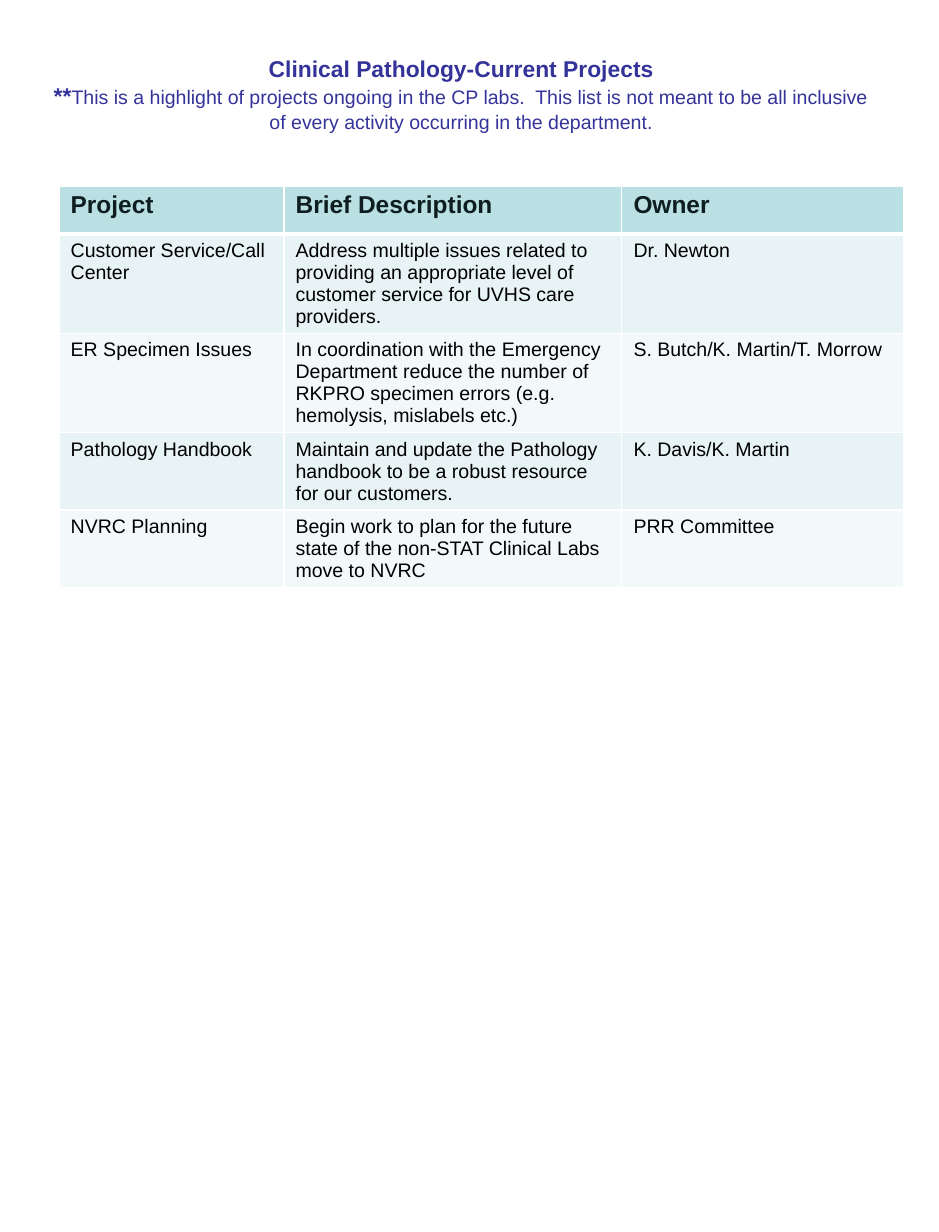
import pptx
import pptx.dml.color
import pptx.enum.text
import pptx.oxml
import pptx.oxml.ns
import pptx.util

PX = 914400 / 117.4
COLORS = {
    "title": "333399",
    "header_fill": "BBE0E3",
    "header_text": "0E1E20",
    "odd_row": "E7F3F4",
    "even_row": "F3F9FA",
    "body_text": "000000",
    "border": "FFFFFF",
}
COLUMN_WIDTHS = [225, 338, 282]
ROW_HEIGHTS = [48, 99, 99, 77, 77]
PROJECTS = [
    ("Project", "Brief Description", "Owner"),
    ("Customer Service/Call Center",
     "Address multiple issues related to providing an appropriate level of "
     "customer service for UVHS care providers.",
     "Dr. Newton"),
    ("ER Specimen Issues",
     "In coordination with the Emergency Department reduce the number of "
     "RKPRO specimen errors (e.g. hemolysis, mislabels etc.)",
     "S. Butch/K. Martin/T. Morrow"),
    ("Pathology Handbook",
     "Maintain and update the Pathology handbook to be a robust resource "
     "for our customers.",
     "K. Davis/K. Martin"),
    ("NVRC Planning",
     "Begin work to plan for the future state of the non-STAT Clinical Labs "
     "move to NVRC",
     "PRR Committee"),
]


def px(length):
    return pptx.util.Emu(round(length * PX))


def rgb(name):
    return pptx.dml.color.RGBColor.from_string(COLORS[name])


class SlideBuilder:
    font_name = "Arial"

    def __init__(self, slide):
        self.slide = slide

    def style(self, font, size, color, bold=False):
        font.name = self.font_name
        font.size = pptx.util.Pt(size)
        font.bold = bold
        font.color.rgb = rgb(color)

    def heading(self, left, top, width, height, paragraphs):
        shape = self.slide.shapes.add_textbox(px(left), px(top), px(width), px(height))
        frame = shape.text_frame
        frame.word_wrap = True
        frame.vertical_anchor = pptx.enum.text.MSO_ANCHOR.BOTTOM
        frame.margin_left = frame.margin_right = px(13)
        frame.margin_bottom = px(3)
        for index, runs in enumerate(paragraphs):
            paragraph = frame.add_paragraph() if index else frame.paragraphs[0]
            paragraph.alignment = pptx.enum.text.PP_ALIGN.CENTER
            paragraph.line_spacing = pptx.util.Pt(15.5)
            paragraph.space_before = pptx.util.Pt(index)
            for text, size, bold in runs:
                run = paragraph.add_run()
                run.text = text
                self.style(run.font, size, "title", bold)

    def borders(self, cell, bottom, top):
        properties = cell._tc.get_or_add_tcPr()
        for side, points in (("L", 1), ("R", 1), ("T", top), ("B", bottom)):
            properties.append(pptx.oxml.parse_xml(
                f'<a:ln{side} {pptx.oxml.ns.nsdecls("a")} w="{pptx.util.Pt(points)}">'
                f'<a:solidFill><a:srgbClr val="{COLORS["border"]}"/></a:solidFill>'
                f'</a:ln{side}>'))

    def table(self, left, top, widths, heights, rows):
        table = self.slide.shapes.add_table(
            len(rows), len(widths), px(left), px(top), px(sum(widths)), px(sum(heights))).table
        table.horz_banding = False
        for column, width in zip(table.columns, widths):
            column.width = px(width)
        for index, (row, height, texts) in enumerate(zip(table.rows, heights, rows)):
            row.height = px(height)
            header = index == 0
            fill = "header_fill" if header else "odd_row" if index % 2 else "even_row"
            for cell, text in zip(row.cells, texts):
                self.borders(cell, bottom=3 if header else 1, top=3 if index == 1 else 1)
                cell.fill.solid()
                cell.fill.fore_color.rgb = rgb(fill)
                cell.text = text
                self.style(cell.text_frame.paragraphs[0].font,
                           15 if header else 12,
                           "header_text" if header else "body_text", header)


def main():
    presentation = pptx.Presentation()
    presentation.slide_width = pptx.util.Inches(8)
    presentation.slide_height = pptx.util.Inches(10.5)
    builder = SlideBuilder(presentation.slides.add_slide(presentation.slide_layouts[6]))
    builder.table(59, 186, COLUMN_WIDTHS, ROW_HEIGHTS, PROJECTS)
    builder.heading(39, 20, 845, 117, [
        [("Clinical Pathology-Current Projects", 14, True)],
        [("**", 14, True),
         ("This is a highlight of projects ongoing in the CP labs.  This list is not "
          "meant to be all inclusive of every activity occurring in the department.",
          12, False)],
    ])
    presentation.save("out.pptx")


if __name__ == "__main__":
    main()
